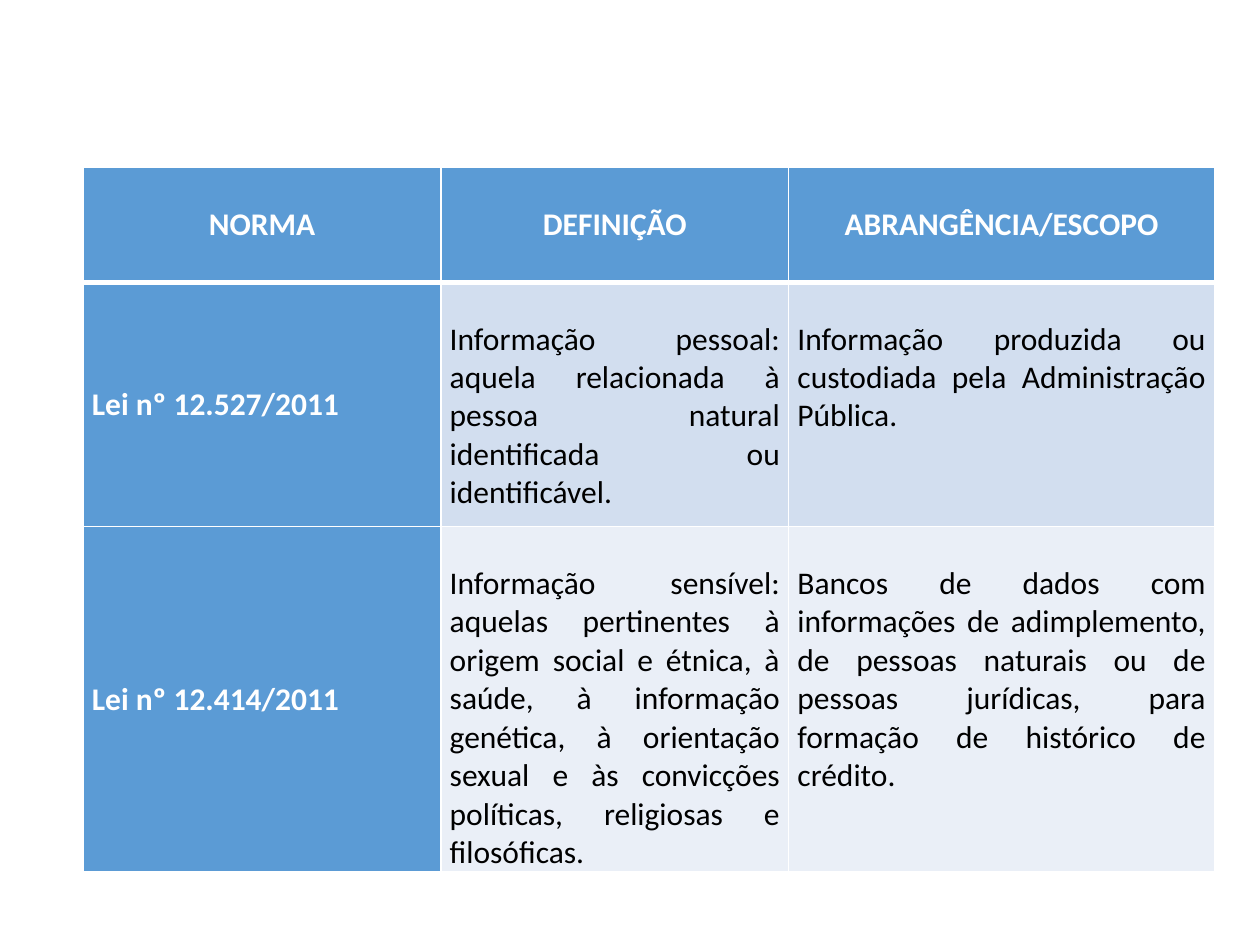
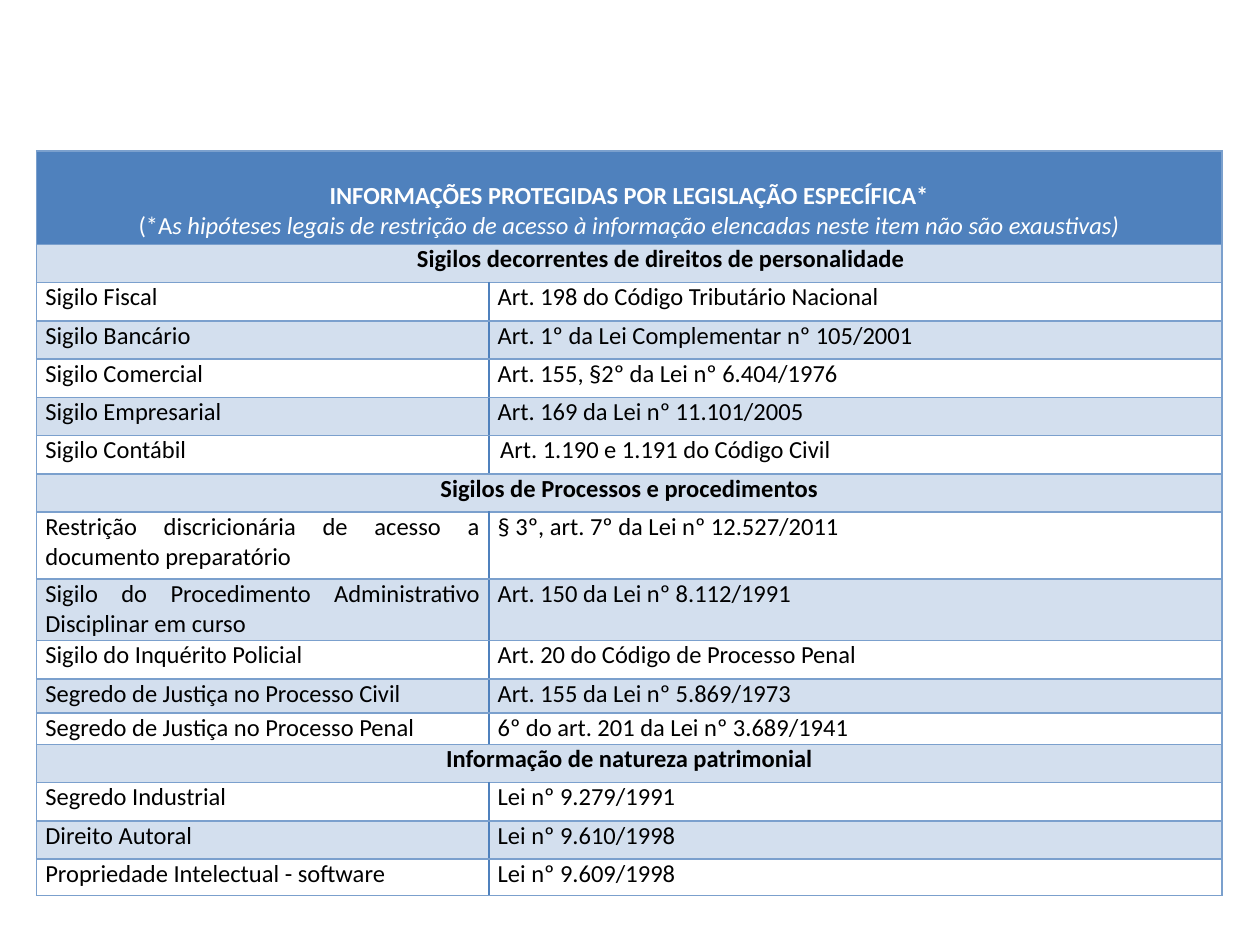
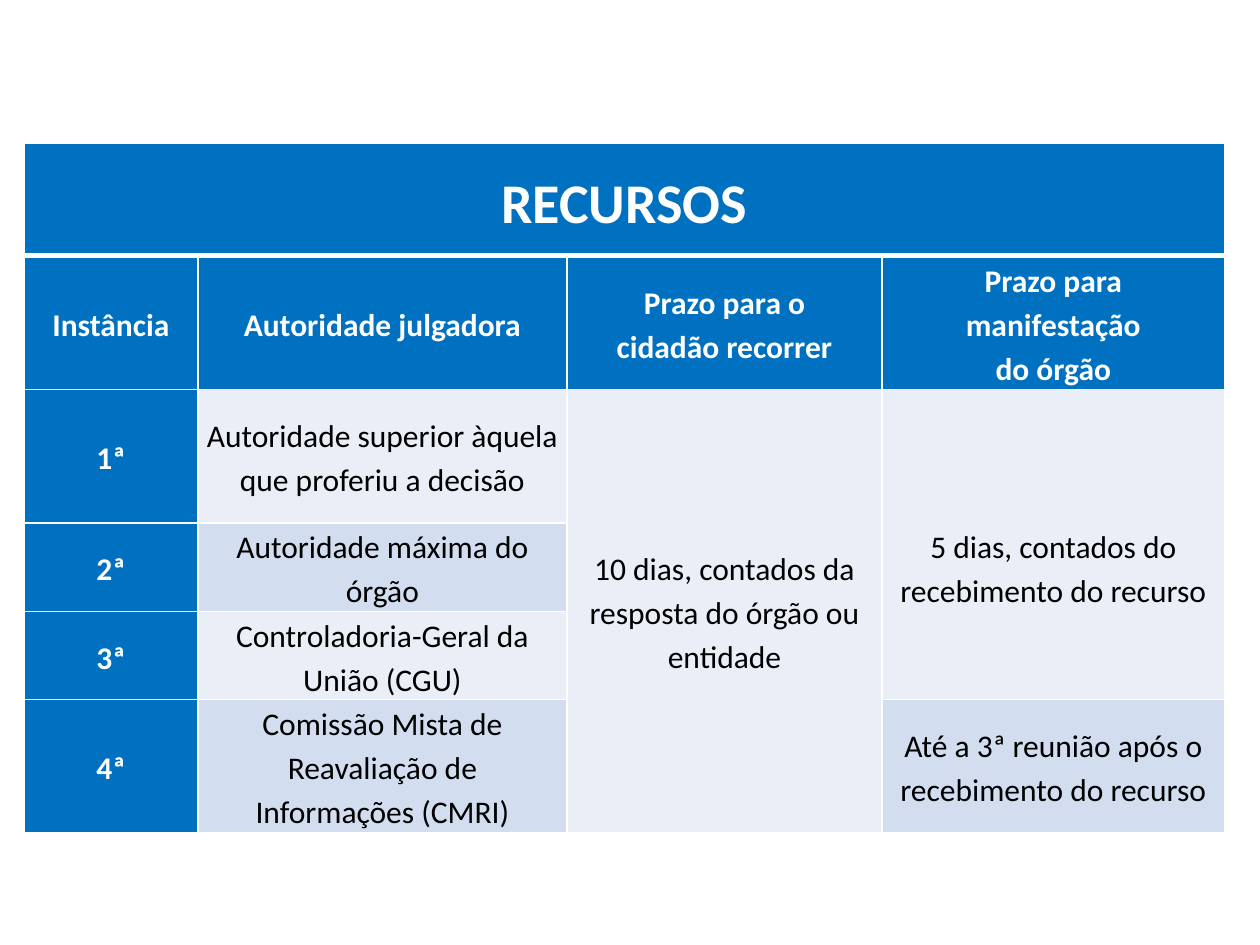
from dataclasses import dataclass, replace

from lxml.etree import SubElement
from pptx import Presentation
from pptx.dml.color import RGBColor as Rgb
from pptx.enum.text import MSO_ANCHOR as Anchor, PP_ALIGN as Align
from pptx.oxml.ns import qn
from pptx.util import Inches, Pt


@dataclass(frozen=True)
class Theme:
    font: str = "Calibri"
    white: str = "FFFFFF"
    black: str = "000000"
    norm_blue: str = "5B9BD5"
    secrecy_blue: str = "4F81BD"
    secrecy_rule: str = "7BA0CD"
    secrecy_band: str = "D3DFEE"
    appeal_blue: str = "0070C0"
    band: str = "D2DEEF"
    light_band: str = "EAEFF7"
    title_size: int = 32
    text_size: int = 18
    small_size: int = 14
    rule: int = 1
    header_rule: int = 3
    side_margin: float = 0.07


@dataclass(frozen=True)
class TextStyle:
    size: int
    color: str
    bold: bool = False
    italic: bool = False


THEME = Theme()
HEADING = TextStyle(THEME.text_size, THEME.white, bold=True)
BODY = TextStyle(THEME.text_size, THEME.black)
TITLE = replace(HEADING, size=THEME.title_size)
SMALL = TextStyle(THEME.small_size, THEME.black)
SECTION = replace(SMALL, bold=True)
BANNER = replace(SECTION, color=THEME.white)
BANNER_NOTE = replace(BANNER, bold=False)
BANNER_ITALIC = replace(BANNER_NOTE, italic=True)

NORMS_HEADER = ["NORMA", "DEFINIÇÃO", "ABRANGÊNCIA/ESCOPO"]
NORMS = [
    ("Lei nº 12.527/2011",
     "Informação pessoal: aquela relacionada à pessoa natural identificada ou identificável.",
     "Informação produzida ou custodiada pela Administração Pública."),
    ("Lei nº 12.414/2011",
     "Informação sensível: aquelas pertinentes à origem social e étnica, à saúde, à informação "
     "genética, à orientação sexual e às convicções políticas, religiosas e filosóficas.",
     "Bancos de dados com informações de adimplemento, de pessoas naturais ou de pessoas "
     "jurídicas, para formação de histórico de crédito."),
]

SECRECY_SECTIONS = [
    ("Sigilos decorrentes de direitos de personalidade", [
        ("Sigilo Fiscal", "Art. 198 do Código Tributário Nacional"),
        ("Sigilo Bancário", "Art. 1º da Lei Complementar nº 105/2001"),
        ("Sigilo Comercial", "Art. 155, §2º da Lei nº 6.404/1976"),
        ("Sigilo Empresarial", "Art. 169 da Lei nº 11.101/2005"),
        ("Sigilo Contábil", "Art. 1.190 e 1.191 do Código Civil"),
    ]),
    ("Sigilos de Processos e procedimentos", [
        ("Restrição discricionária de acesso a documento preparatório",
         "§ 3º, art. 7º da Lei nº 12.527/2011"),
        ("Sigilo do Procedimento Administrativo Disciplinar em curso",
         "Art. 150 da Lei nº 8.112/1991"),
        ("Sigilo do Inquérito Policial", "Art. 20 do Código de Processo Penal"),
        ("Segredo de Justiça no Processo Civil", "Art. 155 da Lei nº 5.869/1973"),
        ("Segredo de Justiça no Processo Penal", "6º do art. 201 da Lei nº 3.689/1941"),
    ]),
    ("Informação de natureza patrimonial", [
        ("Segredo Industrial", "Lei nº 9.279/1991"),
        ("Direito Autoral", "Lei nº 9.610/1998"),
        ("Propriedade Intelectual - software", "Lei nº 9.609/1998"),
    ]),
]
SECRECY_HEIGHT = 5.91
SECRECY_ROW_COUNT = 17
SPECIAL_ROWS = {0: 0.74, 8: 0.53, 9: 0.49, 11: 0.27, 12: 0.25, 16: 0.29}
SECTION_INDENTS = {0: 0.5}
ARTICLE_INDENTS = {"Sigilo Contábil": 0.02}

APPEALS_HEADER = ["Instância", "Autoridade julgadora", "Prazo para o\ncidadão recorrer",
                  "Prazo para manifestação\ndo órgão"]
APPEAL_AUTHORITIES = [
    "Autoridade superior àquela que proferiu a decisão",
    "Autoridade máxima do órgão",
    "Controladoria-Geral da União (CGU)",
    "Comissão Mista de Reavaliação de Informações (CMRI)",
]


def add_grid(slide, left, top, widths, heights):
    frame = slide.shapes.add_table(len(heights), len(widths), Inches(left), Inches(top),
                                   Inches(sum(widths)), Inches(sum(heights)))
    grid = frame.table
    grid.first_row = grid.horz_banding = False
    for column, width in zip(grid.columns, widths):
        column.width = Inches(width)
    for row, height in zip(grid.rows, heights):
        row.height = Inches(height)
    return grid


def add_edge(cell, side, color, weight):
    edge = SubElement(cell._tc.get_or_add_tcPr(), qn(f"a:ln{side}"), w=str(Pt(weight)))
    SubElement(SubElement(edge, qn("a:solidFill")), qn("a:srgbClr"), val=color)


def rule_grid(grid, color, inner_color, header_rule):
    last_column = len(grid.columns) - 1
    for row_index, row in enumerate(grid.rows):
        top_weight = header_rule if row_index == 1 else THEME.rule
        bottom_weight = header_rule if row_index == 0 else THEME.rule
        for column_index, cell in enumerate(row.cells):
            at_end = column_index == last_column
            if cell.is_spanned:
                if at_end:
                    add_edge(cell, "R", color, THEME.rule)
                continue
            outer_right = at_end or cell.is_merge_origin
            add_edge(cell, "L", inner_color if column_index else color, THEME.rule)
            add_edge(cell, "R", color if outer_right else inner_color, THEME.rule)
            add_edge(cell, "T", color, top_weight)
            add_edge(cell, "B", color, bottom_weight)


def add_run(paragraph, text, style):
    run = paragraph.add_run()
    run.text = text
    font = run.font
    font.name, font.size = THEME.font, Pt(style.size)
    font.bold, font.italic = style.bold, style.italic
    font.color.rgb = Rgb.from_string(style.color)


def fill_cell(cell, paragraphs, fill, align, anchor=Anchor.TOP, top=0, indent=0,
              side=THEME.side_margin, spacing=None):
    cell.margin_left, cell.margin_right = Inches(side + indent), Inches(side)
    cell.margin_top, cell.margin_bottom = Inches(top), 0
    cell.vertical_anchor = anchor
    if fill:
        cell.fill.solid()
        cell.fill.fore_color.rgb = Rgb.from_string(fill)
    else:
        cell.fill.background()
    frame = cell.text_frame
    for index, runs in enumerate(paragraphs):
        paragraph = frame.add_paragraph() if index else frame.paragraphs[0]
        paragraph.alignment = align
        if spacing:
            paragraph.line_spacing = spacing
        for text, style in runs:
            for line_index, line in enumerate(text.split("\n")):
                if line_index:
                    paragraph.add_line_break()
                add_run(paragraph, line, style)


def fill_text(cell, text, style, fill, align, **layout):
    fill_cell(cell, [[(text, style)]], fill, align, **layout)


def build_norms(slide):
    grid = add_grid(slide, 0.66, 1.33, [2.84, 2.76, 3.38], [0.91, 1.94, 2.74])
    rule_grid(grid, THEME.white, THEME.white, THEME.header_rule)
    for column, heading in enumerate(NORMS_HEADER):
        fill_text(grid.cell(0, column), heading, HEADING, THEME.norm_blue, Align.CENTER,
                  anchor=Anchor.MIDDLE)
    for row, (law, *details) in enumerate(NORMS, start=1):
        fill_text(grid.cell(row, 0), law, HEADING, THEME.norm_blue, Align.LEFT,
                  anchor=Anchor.MIDDLE)
        band = THEME.band if row % 2 else THEME.light_band
        for column, detail in enumerate(details, start=1):
            fill_text(grid.cell(row, column), detail, BODY, band, Align.JUSTIFY, top=0.3)


def build_secrecy(slide):
    shared_height = SECRECY_HEIGHT - sum(SPECIAL_ROWS.values())
    standard_row = shared_height / (SECRECY_ROW_COUNT - len(SPECIAL_ROWS))
    heights = [SPECIAL_ROWS.get(row, standard_row) for row in range(SECRECY_ROW_COUNT)]
    grid = add_grid(slide, 0.29, 1.2, [3.59, 5.82], heights)

    section_rows = []
    next_row = 1
    for _, entries in SECRECY_SECTIONS:
        section_rows.append(next_row)
        next_row += len(entries) + 1
    for row in [0, *section_rows]:
        grid.cell(row, 0).merge(grid.cell(row, 1))
    rule_grid(grid, THEME.secrecy_rule, THEME.secrecy_blue, THEME.rule)

    banner = [
        [("INFORMAÇÕES PROTEGIDAS POR LEGISLAÇÃO ESPECÍFICA*", BANNER)],
        [("(*A", BANNER_NOTE),
         ("s hipóteses legais de restrição de acesso à informação elencadas neste item "
          "não são exaustivas)", BANNER_ITALIC)],
    ]
    fill_cell(grid.cell(0, 0), banner, THEME.secrecy_blue, Align.CENTER, top=0.24)
    for index, (section, entries) in enumerate(SECRECY_SECTIONS):
        first_row = section_rows[index]
        fill_text(grid.cell(first_row, 0), section, SECTION, THEME.secrecy_band,
                  Align.CENTER, indent=SECTION_INDENTS.get(index, 0))
        for row, (secret, article) in enumerate(entries, start=first_row + 1):
            band = THEME.secrecy_band if row % 2 else None
            fill_text(grid.cell(row, 0), secret, SMALL, band, Align.JUSTIFY)
            fill_text(grid.cell(row, 1), article, SMALL, band, Align.JUSTIFY,
                      indent=ARTICLE_INDENTS.get(secret, 0))


def build_appeals(slide):
    grid = add_grid(slide, 0.19, 1.14, [1.38, 2.93, 2.5, 2.72],
                    [0.89, 1.06, 1.06, 0.7, 0.7, 1.05])
    grid.cell(0, 0).merge(grid.cell(0, 3))
    grid.cell(2, 2).merge(grid.cell(5, 2))
    grid.cell(2, 3).merge(grid.cell(4, 3))
    rule_grid(grid, THEME.white, THEME.white, THEME.header_rule)

    def place(row, column, text, style, fill, **layout):
        fill_text(grid.cell(row, column), text, style, fill, Align.CENTER,
                  anchor=Anchor.MIDDLE, spacing=1.15, **layout)

    place(0, 0, "RECURSOS", TITLE, THEME.appeal_blue)
    for column, heading in enumerate(APPEALS_HEADER):
        place(1, column, heading, HEADING, THEME.appeal_blue, side=0.12)
    for level, authority in enumerate(APPEAL_AUTHORITIES, start=1):
        place(level + 1, 0, f"{level}ª", HEADING, THEME.appeal_blue)
        band = THEME.light_band if level % 2 else THEME.band
        place(level + 1, 1, authority, BODY, band)
    place(2, 2, "10 dias, contados da resposta do órgão ou entidade", BODY, THEME.light_band)
    place(2, 3, "5 dias, contados do recebimento do recurso", BODY, THEME.light_band, top=0.35)
    place(5, 3, "Até a 3ª reunião após o recebimento do recurso", BODY, THEME.band)


def main():
    deck = Presentation()
    deck.slide_width, deck.slide_height = Inches(10), Inches(7.5)
    blank = deck.slide_layouts[6]
    for build in (build_norms, build_secrecy, build_appeals):
        build(deck.slides.add_slide(blank))
    deck.save("out.pptx")


if __name__ == "__main__":
    main()
